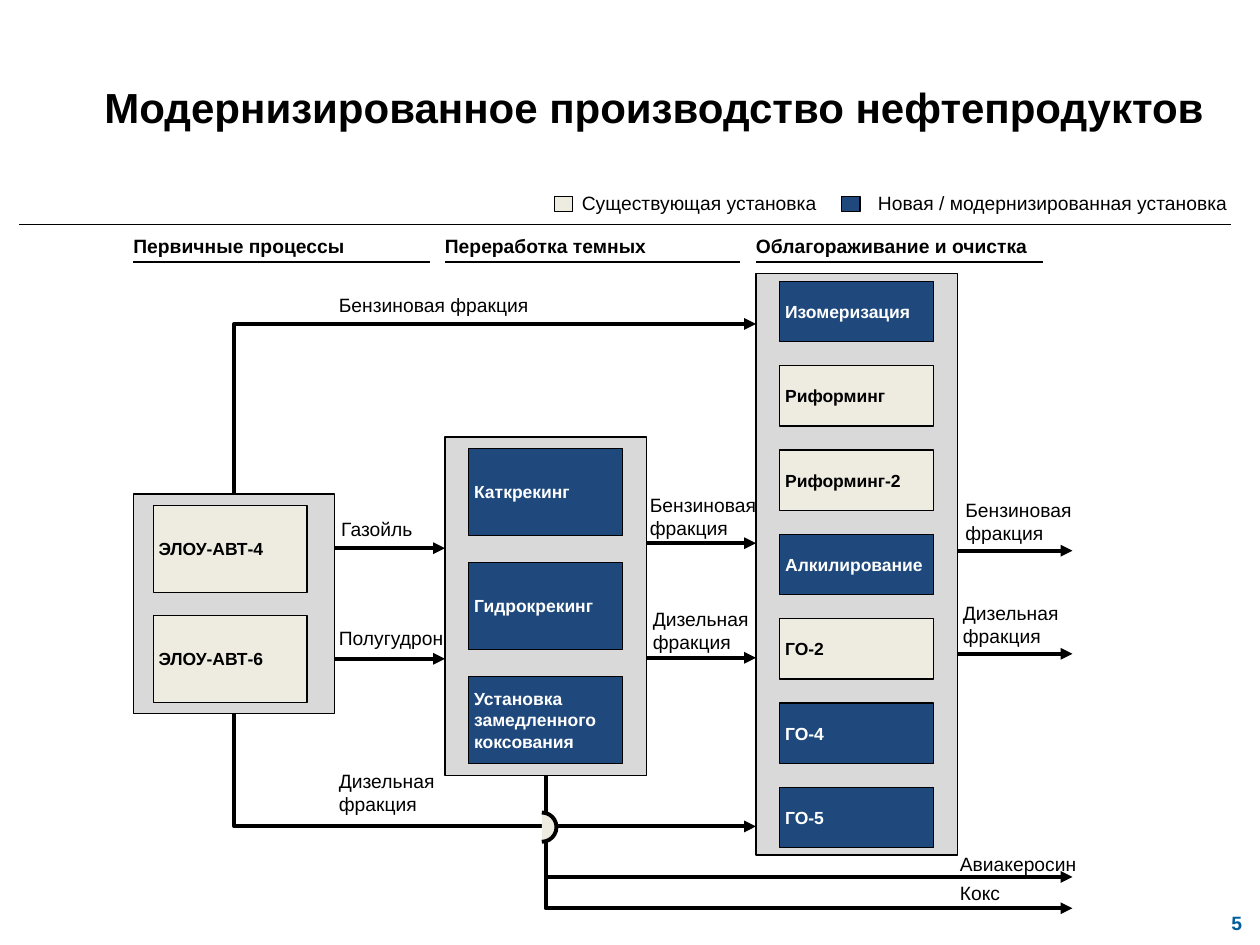
from lxml import etree
from pptx import Presentation
from pptx.dml.color import RGBColor
from pptx.enum import shapes, text
from pptx.oxml.ns import qn
from pptx.util import Cm, Pt

THEME = {
    "font": "Arial",
    "black": "000000", "white": "FFFFFF", "panel": "D9D9D9",
    "old": "EEECE1", "new": "1F497D", "number": "005E9D",
    "title": 24, "label": 11, "unit": 10,
    "thin": 0.75, "flow": 2.25,
}

# ---- Content (lengths in cm) ----
TITLE = "Модернизированное производство нефтепродуктов"
PAGE = "5"
LEGEND = [  # name, kind, swatch x, text x, text width
    ("Существующая установка", "old", 11.18, 11.73, 6.43),
    ("Новая / модернизированная установка", "new", 16.97, 17.7, 7.54),
]
PANEL_W, UNIT_W = 4.06, 3.1
COLUMNS = [
    dict(head="Первичные процессы", x=2.69, rule=5.97, y=9.96, h=4.42,
         inset=0.4, first=10.19, pitch=2.22, unit_h=1.75,
         units=[("ЭЛОУ-АВТ-4", "old"), ("ЭЛОУ-АВТ-6", "old")]),
    dict(head="Переработка темных", x=8.97, rule=5.95, y=8.81, h=6.83,
         inset=0.48, first=9.04, pitch=2.3, unit_h=1.75,
         units=[("Каткрекинг", "new"), ("Гидрокрекинг", "new"),
                ("Установка замедленного коксования", "new")]),
    dict(head="Облагораживание и очистка", x=15.24, rule=5.79, y=5.51, h=11.73,
         inset=0.48, first=5.67, pitch=1.7, unit_h=1.22,
         units=[("Изомеризация", "new"), ("Риформинг", "old"),
                ("Риформинг-2", "old"), ("Алкилирование", "new"),
                ("ГО-2", "old"), ("ГО-4", "new"), ("ГО-5", "new")]),
]
OUT_X = 21.62  # where the outgoing flows end
FLOWS = [  # source column, y
    (0, 11.05), (0, 13.28), (1, 10.95), (1, 13.26), (2, 11.1), (2, 13.18),
]
BENDS = [  # source column, side (0 top, 2 bottom), end x, end y
    (0, 0, COLUMNS[2]["x"], 6.53), (0, 2, COLUMNS[2]["x"], 16.66),
    (1, 2, OUT_X, 18.31), (1, 2, OUT_X, 17.68),
]
LABELS = [  # text, x, y, width, lines
    ("Бензиновая фракция", 6.83, 5.9, 5.1, 1),
    ("Дизельная фракция", 6.83, 15.5, 2.6, 2),
    ("Газойль", 6.88, 10.42, 2.03, 1),
    ("Полугудрон", 6.83, 12.63, 2.26, 1),
    ("Бензиновая фракция", 13.1, 9.93, 2.31, 2),
    ("Дизельная фракция", 13.16, 12.24, 2.21, 2),
    ("Бензиновая фракция", 19.46, 10.03, 2.44, 2),
    ("Дизельная фракция", 19.41, 12.11, 2.21, 2),
    ("Авиакеросин", 19.35, 17.17, 2.54, 1),
    ("Кокс", 19.35, 17.77, 2.34, 1),
]
LINE_H = 0.47

prs = Presentation()
prs.slide_width, prs.slide_height = Cm(25.4), Cm(19.05)
slide = prs.slides.add_slide(prs.slide_layouts[5])


def color(name):
    return RGBColor.from_string(THEME[name])


def write(sp, words, size="label", fill="black", bold=False,
          align=text.PP_ALIGN.LEFT, anchor=text.MSO_ANCHOR.BOTTOM, margin=(0, 0)):
    tf = sp.text_frame
    tf.word_wrap = True
    tf.auto_size = text.MSO_AUTO_SIZE.NONE
    tf.vertical_anchor = anchor
    tf.margin_left = tf.margin_right = Cm(margin[0])
    tf.margin_top = tf.margin_bottom = Cm(margin[1])
    p = tf.paragraphs[0]
    p.alignment = align
    r = p.add_run()
    r.text = words
    r.font.name, r.font.size, r.font.bold = THEME["font"], Pt(THEME[size]), bold
    r.font.color.rgb = color(fill)


def label(words, x, y, w, h=LINE_H, **fmt):
    write(slide.shapes.add_textbox(Cm(x), Cm(y), Cm(w), Cm(h)), words, **fmt)


def block(x, y, w, h, fill, kind=shapes.MSO_SHAPE.RECTANGLE, width="thin"):
    sp = slide.shapes.add_shape(kind, Cm(x), Cm(y), Cm(w), Cm(h))
    sp.shadow.inherit = False
    sp.fill.solid()
    sp.fill.fore_color.rgb = color(fill)
    sp.line.color.rgb = color("black")
    sp.line.width = Pt(THEME[width])
    return sp


def line(x1, y1, x2, y2, width="thin", kind=shapes.MSO_CONNECTOR.STRAIGHT):
    c = slide.shapes.add_connector(kind, Cm(x1), Cm(y1), Cm(x2), Cm(y2))
    c.line.color.rgb = color("black")
    c.line.width = Pt(THEME[width])
    if width == "flow":
        etree.SubElement(c.line._get_or_add_ln(), qn("a:tailEnd"), type="triangle")
    etree.SubElement(c._element.spPr, qn("a:effectLst"))
    return c


def bend(panel, side, x2, y2):
    """One-corner connector: vertical from the panel, then right."""
    x1 = (panel.left + panel.width / 2) / Cm(1)
    y1 = (panel.top + (panel.height if side == 2 else 0)) / Cm(1)
    c = line(x1, y1, x2, y2, "flow", shapes.MSO_CONNECTOR.ELBOW)
    c.begin_connect(panel, side)
    w, h = abs(y2 - y1), x2 - x1  # frame before the 270 degree turn
    c.left, c.top = Cm((x1 + x2 - w) / 2), Cm((y1 + y2 - h) / 2)
    c.width, c.height = Cm(w), Cm(h)
    pr = c._element.spPr
    pr.find(qn("a:prstGeom")).set("prst", "bentConnector2")
    xfrm = pr.find(qn("a:xfrm"))
    xfrm.attrib.pop("flipV", None)
    xfrm.set("rot", str(270 * 60000))
    xfrm.set("flipH", "1" if side == 2 else "0")


# ---- Title, page number, legend ----
title = slide.shapes.title
title.left, title.top, title.width, title.height = Cm(0.97), Cm(1.52), Cm(24.43), Cm(1.47)
write(title, TITLE, size="title", bold=True, align=text.PP_ALIGN.CENTER,
      anchor=text.MSO_ANCHOR.TOP, margin=(0.25, 0.13))
label(PAGE, 20.19, 18.14, 5.08, 0.91, fill="number", bold=True,
      align=text.PP_ALIGN.RIGHT, anchor=text.MSO_ANCHOR.MIDDLE, margin=(0.23, 0.1))
for name, kind, box_x, text_x, w in LEGEND:
    block(box_x, 3.96, 0.37, 0.31, kind)
    label(name, text_x, 3.86, w)
line(0.38, 4.52, 24.82, 4.52)

# ---- Columns with their units ----
panels = []
for col in COLUMNS:
    label(col["head"], col["x"], 4.72, 5.99, bold=True)
    line(col["x"], 5.28, col["x"] + col["rule"], 5.28)
    panels.append(block(col["x"], col["y"], PANEL_W, col["h"], "panel"))
    for i, (name, kind) in enumerate(col["units"]):
        sp = block(col["x"] + col["inset"], col["first"] + i * col["pitch"],
                   UNIT_W, col["unit_h"], kind)
        write(sp, name, size="unit", fill="white" if kind == "new" else "black",
              bold=True, anchor=text.MSO_ANCHOR.MIDDLE, margin=(0.11, 0.11))

# ---- Flows ----
ends = [col["x"] for col in COLUMNS[1:]] + [OUT_X]
for source, y in FLOWS:
    line(COLUMNS[source]["x"] + PANEL_W, y, ends[source], y, "flow")
for source, side, x, y in BENDS:
    bend(panels[source], side, x, y)

# Half circle where two flows cross
hop = block(10.63, 16.38, 0.59, 0.59, "old", shapes.MSO_SHAPE.ARC, "flow")
hop.adjustments[0], hop.adjustments[1] = 162, 54

# ---- Flow labels ----
for words, x, y, w, lines in LABELS:
    label(words, x, y, w, lines * LINE_H)

prs.save("out.pptx")
